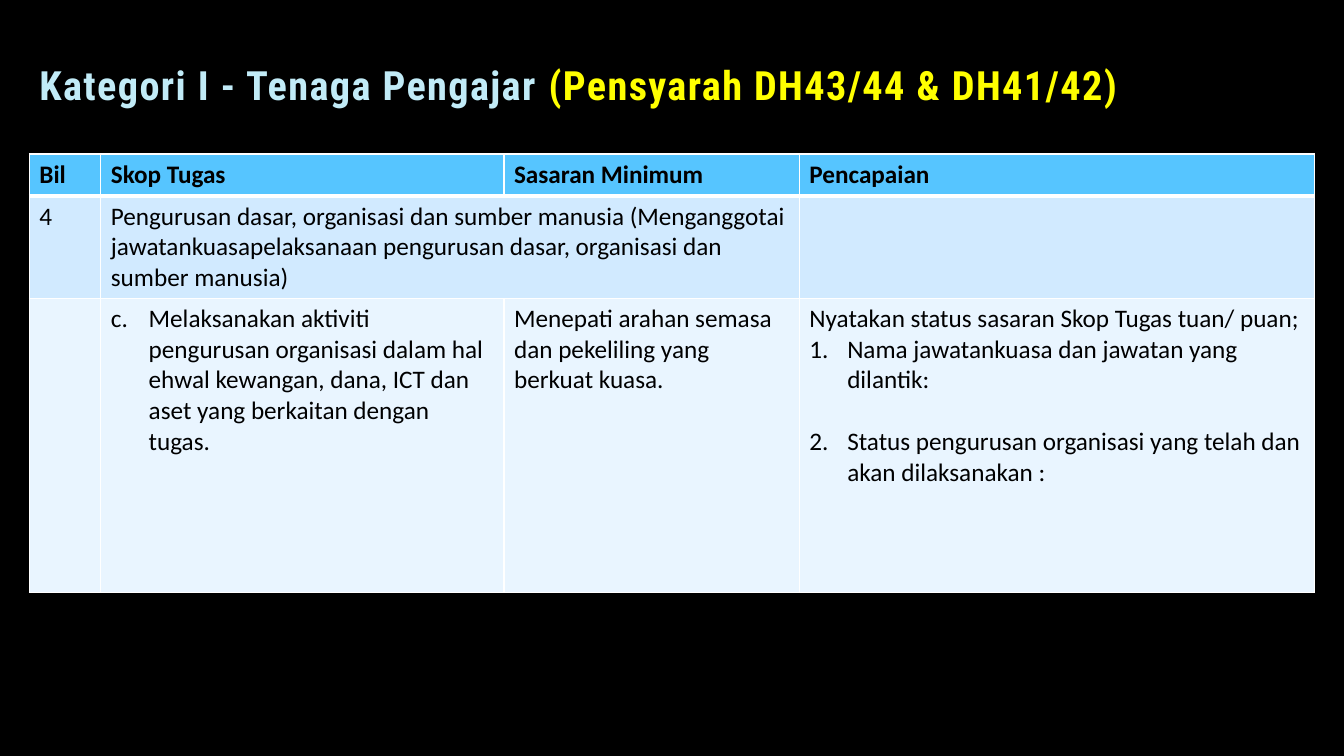
from dataclasses import dataclass

from lxml import etree
from pptx import Presentation
from pptx.dml.color import RGBColor
from pptx.enum.text import MSO_ANCHOR, PP_ALIGN
from pptx.oxml.ns import qn
from pptx.util import Pt

BOTTOM, MIDDLE, TOP = MSO_ANCHOR.BOTTOM, MSO_ANCHOR.MIDDLE, MSO_ANCHOR.TOP
LEFT = PP_ALIGN.LEFT
TITLE_ONLY = 5


@dataclass(frozen=True)
class Theme:
    background: str = "000000"
    title: str = "C1EBF7"
    accent: str = "FFFF00"
    text: str = "000000"
    border: str = "FFFFFF"
    header: str = "56C5FF"
    band: str = "D1EAFF"
    light: str = "E9F5FF"
    title_font: str = "Roboto Condensed"
    body_font: str = "Calibri"
    title_size: float = 28.8
    body_size: float = 18
    list_indent: float = 27


@dataclass(frozen=True)
class Line:
    text: str
    numbering: str = ""
    start: int = 1
    space_before: float = 0


@dataclass(frozen=True)
class Row:
    height: float
    fill: str
    cells: tuple[tuple[Line, ...], ...]
    header: bool = False


THEME = Theme()
COLUMN_WIDTHS = (51, 288, 211, 368)
ROWS = (
    Row(30, THEME.header, (
        (Line("Bil"),),
        (Line("Skop Tugas"),),
        (Line("Sasaran Minimum"),),
        (Line("Pencapaian"),),
    ), header=True),
    Row(73, THEME.band, (
        (Line("4"),),
        (Line("Pengurusan dasar, organisasi dan sumber manusia (Menganggotai "
              "jawatankuasapelaksanaan pengurusan dasar, organisasi dan sumber manusia)"),),
        (),
        (),
    )),
    Row(210, THEME.light, (
        (),
        (Line("Melaksanakan aktiviti pengurusan organisasi dalam hal ehwal kewangan, "
              "dana, ICT dan aset yang berkaitan dengan tugas.", "alphaLcPeriod", 3),),
        (Line("Menepati arahan semasa dan pekeliling yang berkuat kuasa."),),
        (
            Line("Nyatakan status sasaran Skop Tugas tuan/ puan;"),
            Line("Nama jawatankuasa dan jawatan yang dilantik:", "arabicPeriod"),
            Line("Status pengurusan organisasi yang telah dan akan dilaksanakan :",
                 "arabicPeriod", space_before=22),
        ),
    )),
)


def add_span(para, text: str, *, font: str = THEME.body_font, size: float = THEME.body_size,
             color: str = THEME.text, bold: bool = False, spacing: float = 0) -> None:
    span = para.add_run()
    span.text = text
    span.font.name = font
    span.font.size = Pt(size)
    span.font.bold = bold
    span.font.color.rgb = RGBColor.from_string(color)
    if spacing:
        span.font._element.set("spc", str(round(spacing * 100)))


def number_paragraph(para, line: Line) -> None:
    properties = para._p.get_or_add_pPr()
    properties.set("marL", str(Pt(THEME.list_indent)))
    properties.set("indent", str(-Pt(THEME.list_indent)))
    bullet = etree.SubElement(properties, qn("a:buAutoNum"), type=line.numbering)
    if line.start > 1:
        bullet.set("startAt", str(line.start))


def set_borders(cell, bottom_width: float) -> None:
    properties = cell._tc.get_or_add_tcPr()
    widths = {"L": 1, "R": 1, "T": 1, "B": bottom_width}
    for position, (side, width) in enumerate(widths.items()):
        border = etree.Element(qn(f"a:ln{side}"), w=str(Pt(width)))
        fill = etree.SubElement(border, qn("a:solidFill"))
        etree.SubElement(fill, qn("a:srgbClr"), val=THEME.border)
        properties.insert(position, border)


def fill_cell(cell, lines: tuple[Line, ...], row: Row) -> None:
    cell.fill.solid()
    cell.fill.fore_color.rgb = RGBColor.from_string(row.fill)
    cell.vertical_anchor = MIDDLE if row.header else TOP
    set_borders(cell, 3 if row.header else 1)
    frame = cell.text_frame
    for index, line in enumerate(lines):
        para = frame.add_paragraph() if index else frame.paragraphs[0]
        if line.space_before:
            para.space_before = Pt(line.space_before)
        if line.numbering:
            number_paragraph(para, line)
        add_span(para, line.text, bold=row.header)


def add_title(page) -> None:
    box = page.shapes.title
    box.left, box.top, box.width, box.height = Pt(21), Pt(34), Pt(819), Pt(48)
    frame = box.text_frame
    frame.word_wrap = True
    frame.vertical_anchor = BOTTOM
    para = frame.paragraphs[0]
    para.alignment = LEFT
    para.line_spacing = 0.9
    for text, color in (
        ("Kategori I - Tenaga Pengajar ", THEME.title),
        ("(Pensyarah DH43/44 & DH41/42)", THEME.accent),
    ):
        add_span(para, text, font=THEME.title_font, size=THEME.title_size,
                 color=color, bold=True, spacing=1)


def add_duties_table(page) -> None:
    height = sum(row.height for row in ROWS)
    table = page.shapes.add_table(len(ROWS), len(COLUMN_WIDTHS), Pt(21), Pt(110),
                                  Pt(sum(COLUMN_WIDTHS)), Pt(height)).table
    for column, width in zip(table.columns, COLUMN_WIDTHS):
        column.width = Pt(width)
    for row_index, row in enumerate(ROWS):
        table.rows[row_index].height = Pt(row.height)
        for column_index, lines in enumerate(row.cells):
            fill_cell(table.cell(row_index, column_index), lines, row)
    table.cell(1, 1).merge(table.cell(1, 2))


def main() -> None:
    deck = Presentation()
    deck.slide_width, deck.slide_height = Pt(960), Pt(540)
    page = deck.slides.add_slide(deck.slide_layouts[TITLE_ONLY])
    page.background.fill.solid()
    page.background.fill.fore_color.rgb = RGBColor.from_string(THEME.background)
    add_duties_table(page)
    add_title(page)
    deck.save("out.pptx")


if __name__ == "__main__":
    main()
